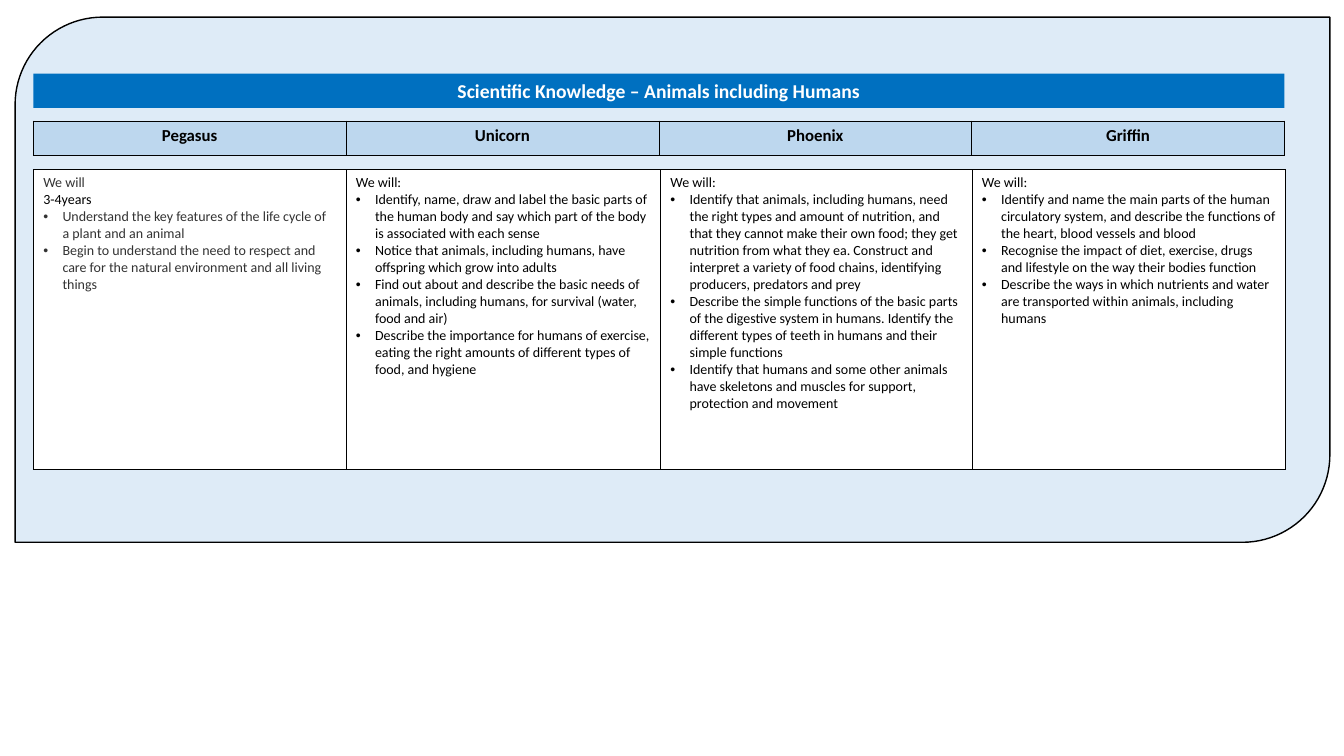
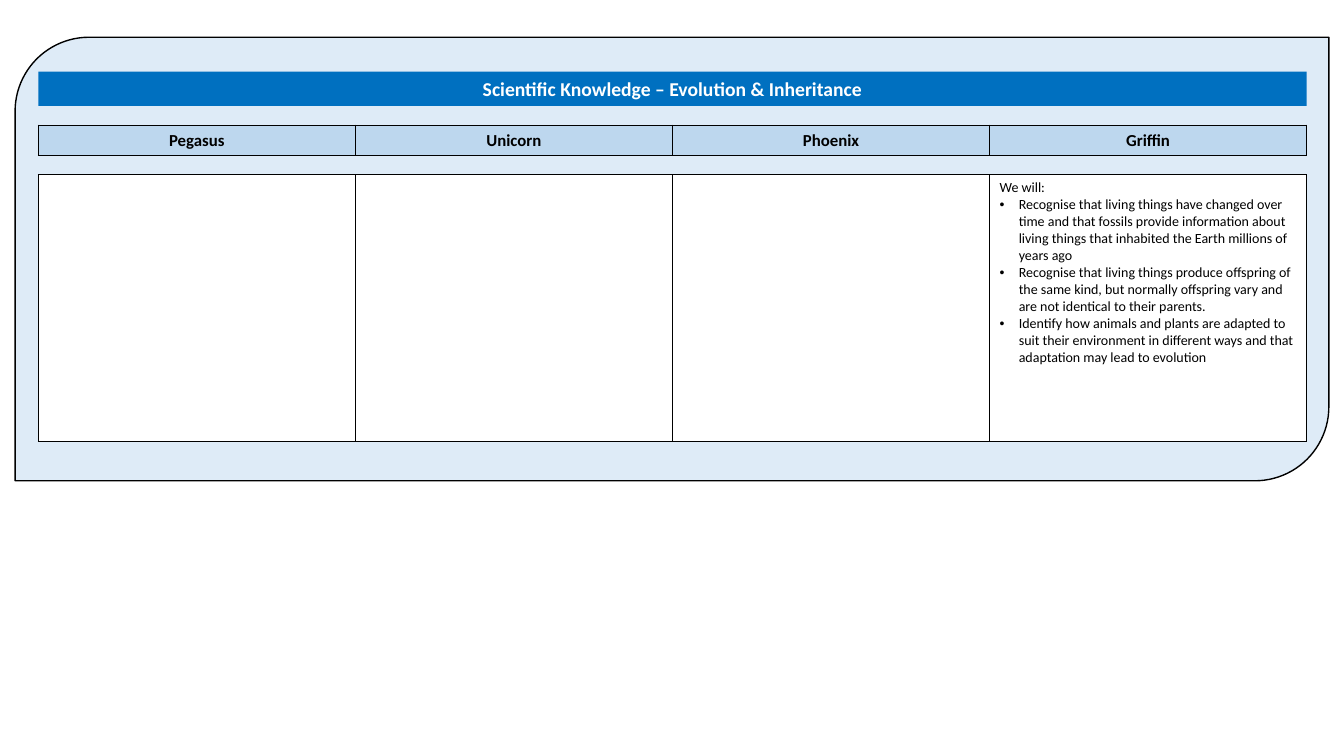
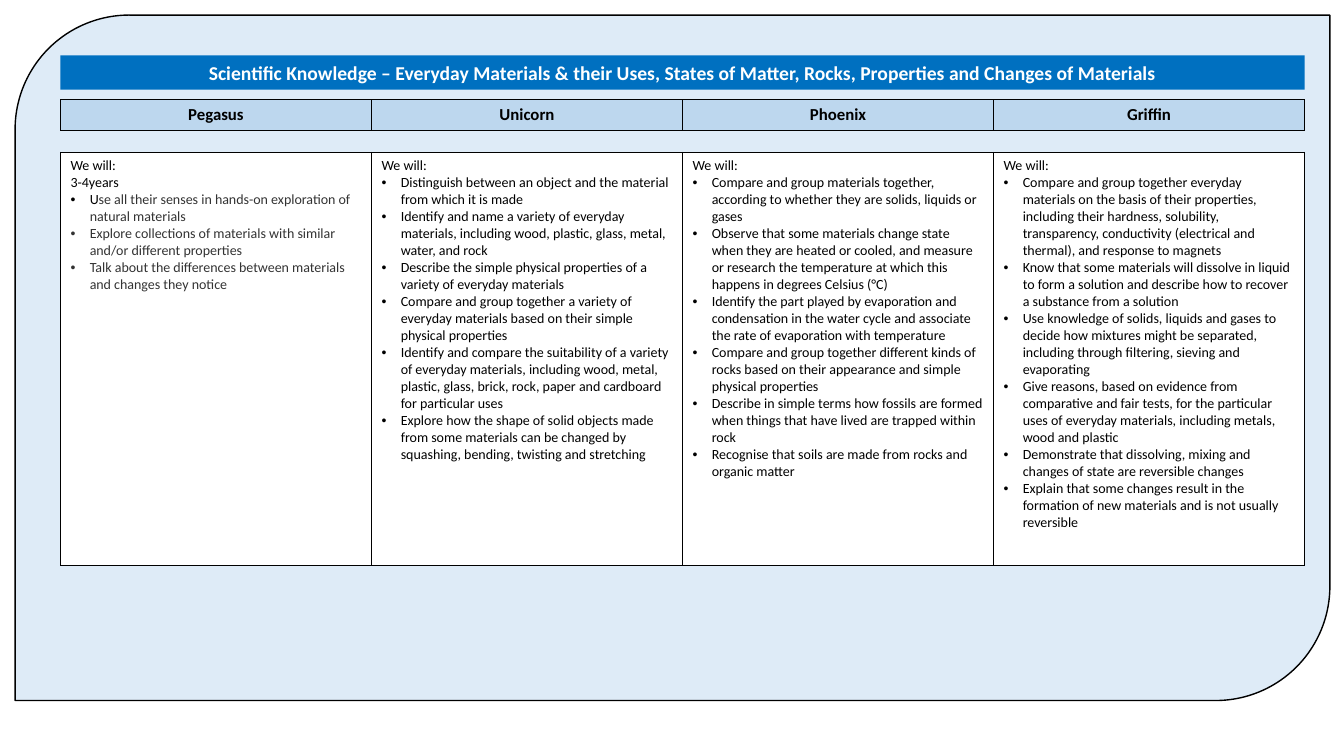
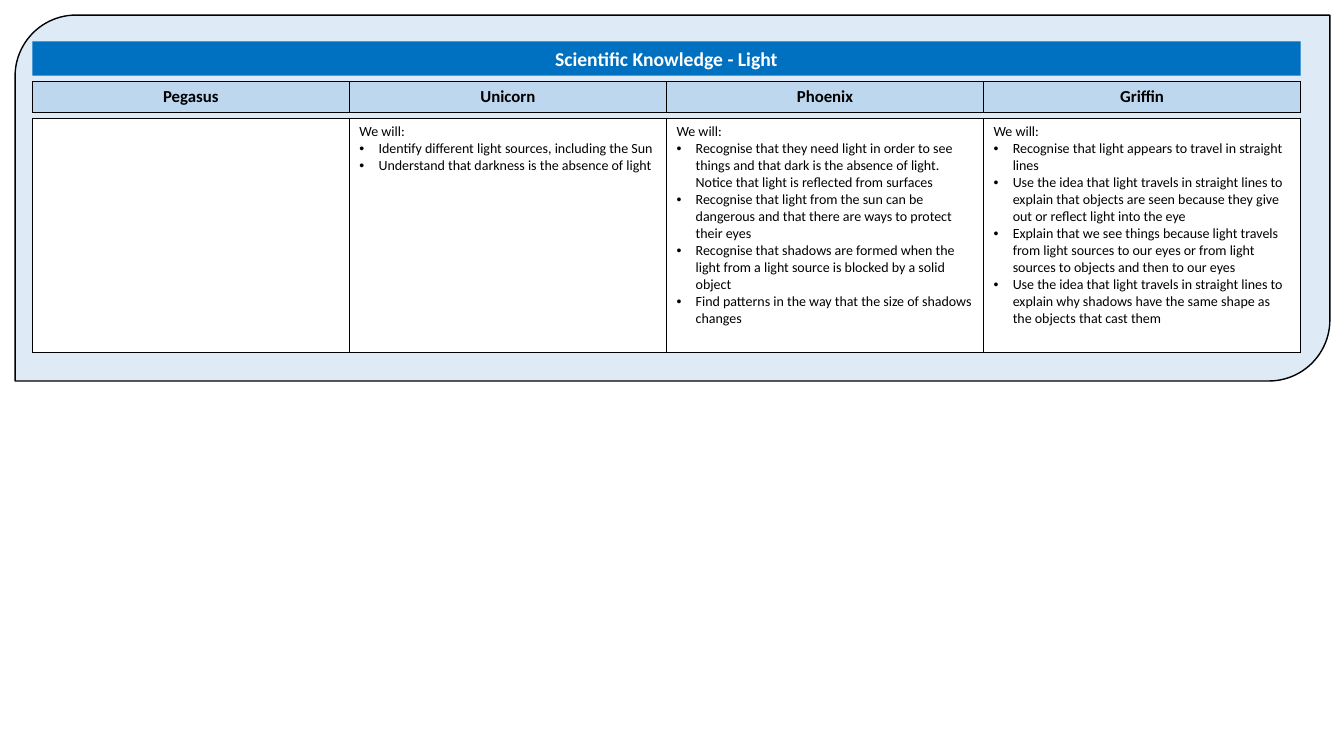
from dataclasses import dataclass
from typing import NamedTuple

from lxml import etree
from pptx import Presentation
from pptx.dml.color import RGBColor
from pptx.enum.shapes import MSO_SHAPE
from pptx.enum.text import MSO_ANCHOR, PP_ALIGN
from pptx.oxml.ns import qn
from pptx.util import Emu, Pt

PANEL, RECT = MSO_SHAPE.ROUND_2_DIAG_RECTANGLE, MSO_SHAPE.RECTANGLE
CENTER, LEFT = PP_ALIGN.CENTER, PP_ALIGN.LEFT
MIDDLE = MSO_ANCHOR.MIDDLE
SCALE = 9144  # EMU per px, 100 px to the inch


@dataclass(frozen=True)
class Theme:
    font: str = "Calibri"
    panel: str = "DEEBF7"
    bar: str = "0070C0"
    head: str = "BDD7EE"
    white: str = "FFFFFF"
    black: str = "000000"
    grey: str = "333333"
    title: int = 14
    label: int = 12
    body: int = 10
    edge: float = 1
    rule: float = 0.5
    indent: int = 19


THEME = Theme()
CLASSES = ["Pegasus", "Unicorn", "Phoenix", "Griffin"]


class Box(NamedTuple):
    left: int
    top: int
    width: int
    height: int


class Line(NamedTuple):
    text: str
    color: str = THEME.black
    bullet: bool = False
    rest: str = ""  # grey ending of the line


@dataclass
class Topic:
    title: str
    panel: Box
    bar: Box
    head: Box
    body: Box
    cells: list[list[Line]]
    widths: tuple[int, ...] = ()


def px(size: float) -> Emu:
    return Emu(round(size * SCALE))


def place(box: Box) -> list[Emu]:
    return [px(size) for size in box]


def rgb(color: str) -> RGBColor:
    return RGBColor.from_string(color)


def points(*texts: str, color: str = THEME.black) -> list[Line]:
    return [Line(text, color, True) for text in texts]


def goals(*texts: str) -> list[Line]:
    return [Line("We will:"), *points(*texts)]


def style(run, size: int, color: str, bold: bool = False) -> None:
    font = run.font
    font.name, font.size, font.bold = THEME.font, Pt(size), bold
    font.color.rgb = rgb(color)


def add_bullet(para) -> None:
    props = para._p.get_or_add_pPr()
    props.set("marL", str(px(THEME.indent)))
    props.set("indent", str(-px(THEME.indent)))
    etree.SubElement(props, qn("a:buFont")).set("typeface", "Arial")
    etree.SubElement(props, qn("a:buChar")).set("char", "•")


def add_rules(cell) -> None:
    props = cell._tc.get_or_add_tcPr()
    for side in ("lnL", "lnR", "lnT", "lnB"):
        rule = etree.SubElement(props, qn(f"a:{side}"))
        rule.set("w", str(Pt(THEME.rule)))
        fill = etree.SubElement(rule, qn("a:solidFill"))
        etree.SubElement(fill, qn("a:srgbClr")).set("val", THEME.black)


def add_block(slide, kind, box: Box, color: str):
    block = slide.shapes.add_shape(kind, *place(box))
    block.shadow.inherit = False
    block.fill.solid()
    block.fill.fore_color.rgb = rgb(color)
    block.line.fill.background()
    return block


def add_panel(slide, box: Box) -> None:
    panel = add_block(slide, PANEL, box, THEME.panel)
    panel.line.color.rgb = rgb(THEME.black)
    panel.line.width = Pt(THEME.edge)


def add_bar(slide, box: Box, title: str) -> None:
    frame = add_block(slide, RECT, box, THEME.bar).text_frame
    frame.text = title
    frame.word_wrap = True
    frame.vertical_anchor = MIDDLE
    para = frame.paragraphs[0]
    para.alignment = CENTER
    style(para.runs[0], THEME.title, THEME.white, True)


def write(cell, lines: list[Line], size: int, align, bold: bool) -> None:
    frame = cell.text_frame
    for index, line in enumerate(lines):
        para = frame.add_paragraph() if index else frame.paragraphs[0]
        para.text = line.text
        para.alignment = align
        style(para.runs[0], size, line.color, bold)
        if line.rest:
            tail = para.add_run()
            tail.text = line.rest
            style(tail, size, THEME.grey, bold)
        if line.bullet:
            add_bullet(para)


def add_row(slide, box: Box, cells: list[list[Line]], fill: str, size: int,
            align=LEFT, bold: bool = False, widths: tuple[int, ...] = ()) -> None:
    table = slide.shapes.add_table(1, len(cells), *place(box)).table
    table.first_row = table.horz_banding = False
    sizes = widths or [box.width / len(cells)] * len(cells)
    for column, width, cell, lines in zip(table.columns, sizes, table.rows[0].cells, cells):
        column.width = px(width)
        add_rules(cell)
        cell.fill.solid()
        cell.fill.fore_color.rgb = rgb(fill)
        write(cell, lines, size, align, bold)


def add_topic(deck, topic: Topic) -> None:
    slide = deck.slides.add_slide(deck.slide_layouts[6])
    add_panel(slide, topic.panel)
    add_bar(slide, topic.bar, topic.title)
    add_row(slide, topic.head, [[Line(name)] for name in CLASSES],
            THEME.head, THEME.label, CENTER, True)
    add_row(slide, topic.body, topic.cells, THEME.white, THEME.body, widths=topic.widths)


TOPICS = [
    # Animals
    Topic(
        "Scientific Knowledge – Animals including Humans",
        Box(15, 17, 1304, 521), Box(33, 73, 1241, 34),
        Box(33, 120, 1241, 34), Box(33, 168, 1242, 298),
        [
            [
                Line("We will", THEME.grey),
                Line("3-4years"),
                *points(
                    "Understand the key features of the life cycle of a plant and an animal",
                    "Begin to understand the need to respect and care for the natural environment and all living things",
                    color=THEME.grey,
                ),
            ],
            goals(
                "Identify, name, draw and label the basic parts of the human body and say which part of the body is associated with each sense",
                "Notice that animals, including humans, have offspring which grow into adults",
                "Find out about and describe the basic needs of animals, including humans, for survival (water, food and air)",
                "Describe the importance for humans of exercise, eating the right amounts of different types of food, and hygiene",
            ),
            goals(
                "Identify that animals, including humans, need the right types and amount of nutrition, and that they cannot make their own food; they get nutrition from what they ea. Construct and interpret a variety of food chains, identifying producers, predators and prey",
                "Describe the simple functions of the basic parts of the digestive system in humans. Identify the different types of teeth in humans and their simple functions",
                "Identify that humans and some other animals have skeletons and muscles for support, protection and movement",
            ),
            goals(
                "Identify and name the main parts of the human circulatory system, and describe the functions of the heart, blood vessels and blood",
                "Recognise the impact of diet, exercise, drugs and lifestyle on the way their bodies function",
                "Describe the ways in which nutrients and water are transported within animals, including humans",
            ),
        ],
        widths=(310, 312, 309, 311),
    ),
    # Evolution
    Topic(
        "Scientific Knowledge – Evolution & Inheritance",
        Box(15, 37, 1303, 440), Box(38, 71, 1258, 34),
        Box(38, 124, 1258, 30), Box(38, 173, 1258, 265),
        [
            [], [], [],
            goals(
                "Recognise that living things have changed over time and that fossils provide information about living things that inhabited the Earth millions of years ago",
                "Recognise that living things produce offspring of the same kind, but normally offspring vary and are not identical to their parents.",
                "Identify how animals and plants are adapted to suit their environment in different ways and that adaptation may lead to evolution",
            ),
        ],
    ),
    # Materials
    Topic(
        "Scientific Knowledge – Everyday Materials & their Uses, States of Matter, Rocks, Properties and Changes of Materials",
        Box(15, 15, 1304, 680), Box(60, 55, 1234, 34),
        Box(60, 99, 1234, 30), Box(60, 151, 1234, 410),
        [
            [
                Line("We will:"),
                Line("3-4years"),
                Line("U", bullet=True, rest="se all their senses in hands-on exploration of natural materials"),
                *points(
                    "Explore collections of materials with similar and/or different properties",
                    "Talk about the differences between materials and changes they notice",
                    color=THEME.grey,
                ),
            ],
            goals(
                "Distinguish between an object and the material from which it is made",
                "Identify and name a variety of everyday materials, including wood, plastic, glass, metal, water, and rock",
                "Describe the simple physical properties of a variety of everyday materials",
                "Compare and group together a variety of everyday materials based on their simple physical properties",
                "Identify and compare the suitability of a variety of everyday materials, including wood, metal, plastic, glass, brick, rock, paper and cardboard for particular uses",
                "Explore how the shape of solid objects made from some materials can be changed by squashing, bending, twisting and stretching",
            ),
            goals(
                "Compare and group materials together, according to whether they are solids, liquids or gases",
                "Observe that some materials change state when they are heated or cooled, and measure or research the temperature at which this happens in degrees Celsius (°C)",
                "Identify the part played by evaporation and condensation in the water cycle and associate the rate of evaporation with temperature",
                "Compare and group together different kinds of rocks based on their appearance and simple physical properties",
                "Describe in simple terms how fossils are formed when things that have lived are trapped within rock",
                "Recognise that soils are made from rocks and organic matter",
            ),
            goals(
                "Compare and group together everyday materials on the basis of their properties, including their hardness, solubility, transparency, conductivity (electrical and thermal), and response to magnets",
                "Know that some materials will dissolve in liquid to form a solution and describe how to recover a substance from a solution",
                "Use knowledge of solids, liquids and gases to decide how mixtures might be separated, including through filtering, sieving and evaporating",
                "Give reasons, based on evidence from comparative and fair tests, for the particular uses of everyday materials, including metals, wood and plastic",
                "Demonstrate that dissolving, mixing and changes of state are reversible changes",
                "Explain that some changes result in the formation of new materials and is not usually reversible",
            ),
        ],
    ),
    # Light
    Topic(
        "Scientific Knowledge - Light",
        Box(15, 15, 1304, 363), Box(32, 41, 1258, 34),
        Box(32, 81, 1258, 30), Box(32, 117, 1258, 233),
        [
            [],
            goals(
                "Identify different light sources, including the Sun",
                "Understand that darkness is the absence of light",
            ),
            goals(
                "Recognise that they need light in order to see things and that dark is the absence of light. Notice that light is reflected from surfaces",
                "Recognise that light from the sun can be dangerous and that there are ways to protect their eyes",
                "Recognise that shadows are formed when the light from a light source is blocked by a solid object",
                "Find patterns in the way that the size of shadows changes",
            ),
            goals(
                "Recognise that light appears to travel in straight lines",
                "Use the idea that light travels in straight lines to explain that objects are seen because they give out or reflect light into the eye",
                "Explain that we see things because light travels from light sources to our eyes or from light sources to objects and then to our eyes",
                "Use the idea that light travels in straight lines to explain why shadows have the same shape as the objects that cast them",
            ),
        ],
    ),
]


def main() -> None:
    deck = Presentation()
    deck.slide_width, deck.slide_height = px(1333), px(750)
    for topic in TOPICS:
        add_topic(deck, topic)
    deck.save("out.pptx")


if __name__ == "__main__":
    main()
